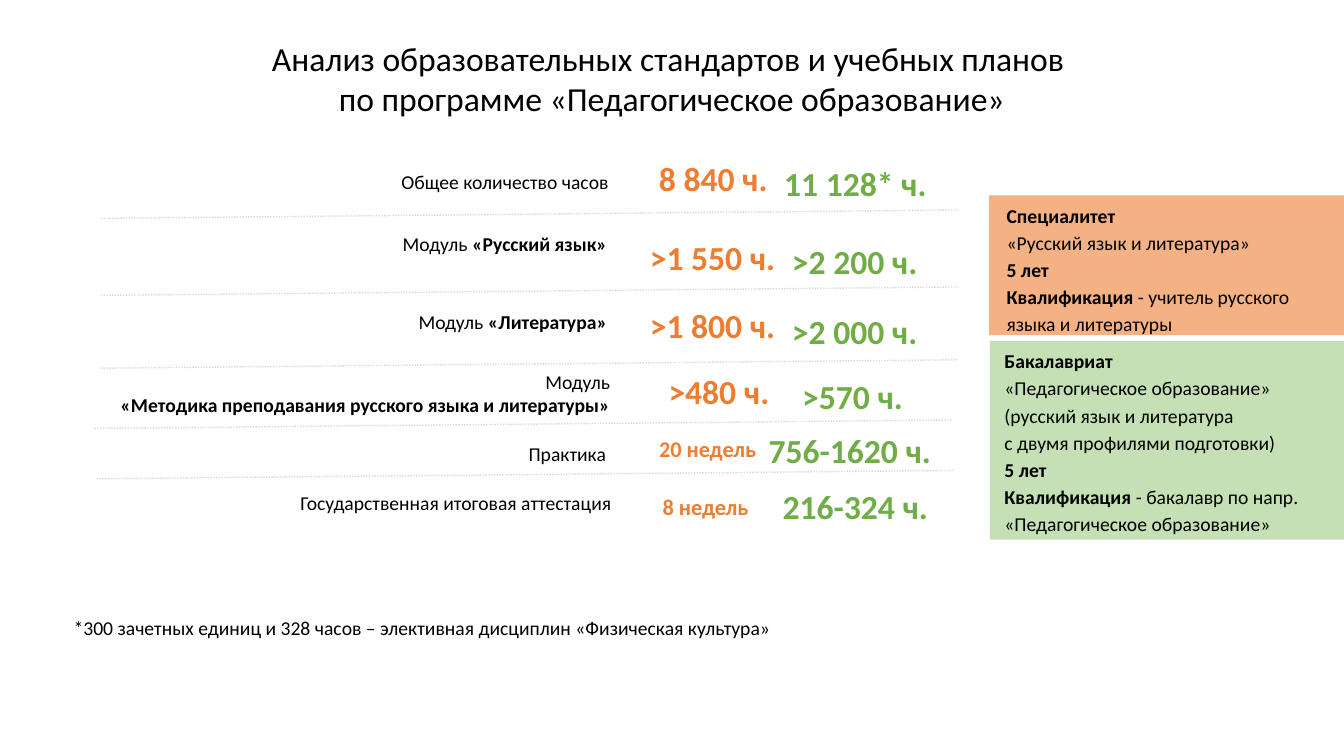
from pptx import Presentation
from pptx.dml.color import RGBColor
from pptx.enum.dml import MSO_LINE
from pptx.enum.shapes import MSO_CONNECTOR, MSO_SHAPE
from pptx.enum.text import MSO_ANCHOR, MSO_AUTO_SIZE, PP_ALIGN
from pptx.oxml.ns import qn
from pptx.util import Pt
from lxml import etree

FONT = "Calibri"
BLACK, ORANGE, GREEN, GREY = "000000", "ED7D31", "70AD47", "D9D9D9"

# Text is a list of paragraphs, each a list of (text, bold) runs
TITLE = [[("Анализ образовательных стандартов и учебных планов ", False)],
         [("по программе «Педагогическое образование»", False)]]
FOOTNOTE = [[("*300 зачетных единиц и 328 часов – элективная дисциплин "
              "«Физическая культура»", False)]]

# Label, its right edge and top
LABELS = [
    ([[("Общее количество часов", False)]], 442, 117.5),
    ([[("Модуль", False), (" «Русский язык» ", True)]], 444, 162),
    ([[("Модуль", False), (" «Литература» ", True)]], 444, 218),
    ([[("Модуль", False)],
      [("«Методика преподавания русского языка и литературы»", True)]], 443, 260.5),
    ([[("Практика", False)]], 440, 312),
    ([[("Государственная итоговая аттестация", False)]], 444, 347),
]
# Value, its centre, top and text size
SPECIALIST = [
    ("8 840 ч.", 509.5, 109.5, 24), (">1 550 ч.", 509, 165.5, 24),
    (">1 800 ч.", 509, 214.5, 24), (">480 ч.", 513.5, 261.5, 24),
    ("20 недель", 505.5, 307.5, 16), ("8 недель", 504, 348.5, 16),
]
BACHELOR = [
    ("11 128* ч.", 611, 108.5, 24), (">2 200 ч.", 610.5, 164, 24),
    (">2 000 ч.", 610.5, 214, 24), (">570 ч.", 609, 260.5, 24),
    ("756-1620 ч.", 607, 299, 24), ("216-324 ч.", 611, 339, 24),
]
# Left end of each divider
DIVIDERS = [(72, 156), (72, 211), (72, 263), (67.5, 306), (69, 342)]
# Left, top, height, left inset, fill, text
PANELS = [
    (706.5, 139.5, 100, 12.5, "F4B183", [
        [("Специалитет", True)],
        [("«Русский язык и литература»", False)],
        [("5 лет", True)],
        [("Квалификация", True), (" - учитель русского", False)],
        [("языка и литературы", False)]]),
    (707, 243.5, 142, 10.5, "C5E0B4", [
        [("Бакалавриат", True)],
        [("«Педагогическое образование»", False)],
        [("(русский язык и литература", False)],
        [("с двумя профилями подготовки)", False)],
        [("5 лет", True)],
        [("Квалификация", True), (" - бакалавр по напр.", False)],
        [("«Педагогическое образование»", False)]]),
]
SLIDE_W, SLIDE_H = 960, 540
LABEL_W, VALUE_W = 480, 140
DIVIDER_W, DIVIDER_RISE = 612, 6


def rgb(value):
    return RGBColor.from_string(value)


def write(tf, paragraphs, size, color=BLACK, align=PP_ALIGN.LEFT, spacing=None):
    tf.word_wrap = True
    tf.auto_size = MSO_AUTO_SIZE.NONE
    for i, runs in enumerate(paragraphs):
        p = tf.paragraphs[0] if i == 0 else tf.add_paragraph()
        p.alignment = align
        if spacing:
            p.line_spacing = spacing
        for text, bold in runs:
            r = p.add_run()
            r.text = text
            r.font.name, r.font.size, r.font.bold = FONT, Pt(size), bold
            r.font.color.rgb = rgb(color)


def add_text(left, top, width, height, *args, **kwargs):
    box = slide.shapes.add_textbox(Pt(left), Pt(top), Pt(width), Pt(height))
    write(box.text_frame, *args, **kwargs)


prs = Presentation()
prs.slide_width, prs.slide_height = Pt(SLIDE_W), Pt(SLIDE_H)
slide = prs.slides.add_slide(prs.slide_layouts[5])

# Title
title = slide.shapes.title
title.left, title.top, title.width, title.height = Pt(0), Pt(23), Pt(SLIDE_W), Pt(66)
title.text_frame.vertical_anchor = MSO_ANCHOR.MIDDLE
write(title.text_frame, TITLE, 24, align=PP_ALIGN.CENTER)

# Programme panels, running to the right edge of the slide
for left, top, height, inset, fill, text in PANELS:
    sp = slide.shapes.add_shape(MSO_SHAPE.RECTANGLE, Pt(left), Pt(top),
                                Pt(SLIDE_W - left), Pt(height))
    sp.shadow.inherit = False
    sp.fill.solid()
    sp.fill.fore_color.rgb = rgb(fill)
    sp.line.fill.background()
    tf = sp.text_frame
    tf.vertical_anchor = MSO_ANCHOR.TOP
    tf.margin_left, tf.margin_right = Pt(inset), Pt(0)
    write(tf, text, 14, spacing=1.15)

# Dotted dividers
for x, y in DIVIDERS:
    line = slide.shapes.add_connector(MSO_CONNECTOR.STRAIGHT, Pt(x), Pt(y),
                                      Pt(x + DIVIDER_W), Pt(y - DIVIDER_RISE))
    line.line.color.rgb = rgb(GREY)
    line.line.width = Pt(1)
    line.line.dash_style = MSO_LINE.ROUND_DOT
    etree.SubElement(line._element.spPr, qn("a:effectLst"))

# Row labels
for text, right, top in LABELS:
    add_text(right - LABEL_W, top, LABEL_W, 7.2 + 17 * len(text), text, 14,
             align=PP_ALIGN.RIGHT)

# Values for the two programmes
for values, color, spacing in ((SPECIALIST, ORANGE, None), (BACHELOR, GREEN, 1.15)):
    for value, centre, top, size in values:
        add_text(centre - VALUE_W / 2, top, VALUE_W, size * 1.5, [[(value, True)]],
                 size, color, PP_ALIGN.CENTER, spacing)

# Footnote
add_text(45.5, 436.5, 581, 24.5, FOOTNOTE, 14)

prs.save("out.pptx")
